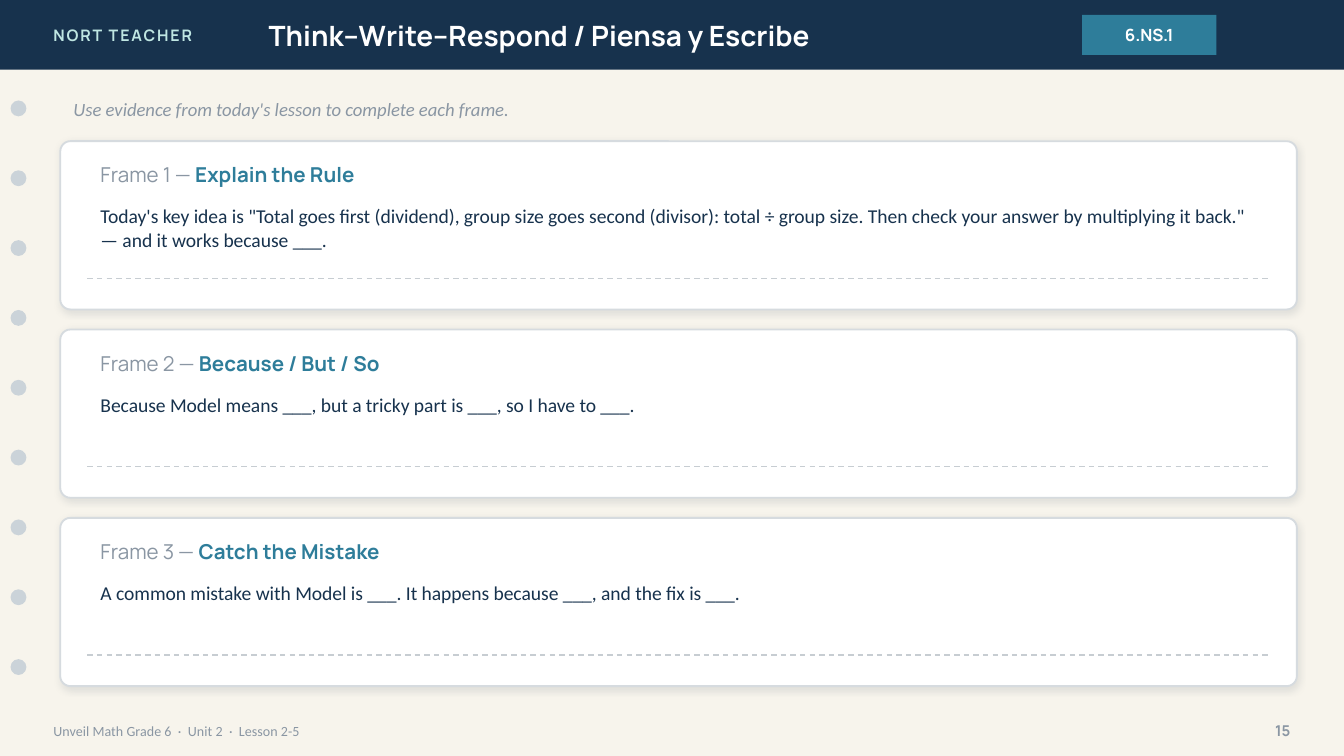
"""Build the Think–Write–Respond slide with three sentence frames."""
from dataclasses import dataclass

from lxml import etree
from pptx import Presentation
from pptx.dml.color import RGBColor
from pptx.enum.dml import MSO_LINE
from pptx.enum.shapes import MSO_CONNECTOR, MSO_SHAPE
from pptx.enum.text import MSO_ANCHOR, PP_ALIGN
from pptx.oxml.ns import qn
from pptx.util import Cm, Pt

RECT, OVAL, ROUNDED = MSO_SHAPE.RECTANGLE, MSO_SHAPE.OVAL, MSO_SHAPE.ROUNDED_RECTANGLE
STRAIGHT, DASH = MSO_CONNECTOR.STRAIGHT, MSO_LINE.DASH
TOP, MIDDLE = MSO_ANCHOR.TOP, MSO_ANCHOR.MIDDLE
LEFT, CENTER, RIGHT = PP_ALIGN.LEFT, PP_ALIGN.CENTER, PP_ALIGN.RIGHT


def style(name, size, color, **extra):
    """Return a dict of font values and their colour."""
    return {"color": color, "font": {"name": name, "size": Pt(size), **extra}}


@dataclass(frozen=True)
class Theme:
    """Colours and type styles of the slide."""

    paper = "F7F4EC"
    navy = "17324D"
    teal = "2E7D9A"
    mint = "BFE6E2"
    white = "FFFFFF"
    muted = "8A96A3"
    hole = "CBD3D9"
    border = "D6DBDF"
    rule = "C7CDD2"
    shadow = "1C2E42"
    brand = style("Manrope", 8.5, mint, bold=True)
    title = style("Manrope", 15, white, bold=True)
    standard = style("Manrope", 9, white, bold=True)
    hint = style("Calibri", 10, muted, italic=True)
    frame_number = style("Manrope", 11, muted)
    frame_name = style("Manrope", 11, teal, bold=True)
    prompt = style("Calibri", 10.5, navy)
    source = style("Calibri", 7.5, muted)
    page = style("Manrope", 8, muted, bold=True)


THEME = Theme()
HOLES, HOLE_TOP, HOLE_PITCH = 9, 1.9, 1.32
CARD_TOP, CARD_PITCH = 2.67, 3.56
CARD_LEFT, CARD_WIDTH, CARD_HEIGHT = 1.14, 23.37, 3.18
INNER_LEFT, INNER_WIDTH = 1.65, 22.35
FRAMES = [
    ("Explain the Rule",
     "Today's key idea is \"Total goes first (dividend), group size goes second (divisor): "
     "total ÷ group size. Then check your answer by multiplying it back.\" "
     "— and it works because ___."),
    ("Because / But / So",
     "Because Model means ___, but a tricky part is ___, so I have to ___."),
    ("Catch the Mistake",
     "A common mistake with Model is ___. It happens because ___, and the fix is ___."),
]


def rgb(color):
    """Return the colour object for a hex value."""
    return RGBColor.from_string(color)


def write(holder, runs, align=LEFT, anchor=MIDDLE):
    """Write styled runs as one paragraph and return the paragraph."""
    frame = holder.text_frame
    for name, value in {"word_wrap": True, "vertical_anchor": anchor}.items():
        setattr(frame, name, value)
    paragraph = frame.paragraphs[0]
    paragraph.alignment = align
    for words, look in runs:
        run = paragraph.add_run()
        run.text = words
        for name, value in look["font"].items():
            setattr(run.font, name, value)
        run.font.color.rgb = rgb(look["color"])
    return paragraph


def add_text(slide, box, runs, align=LEFT, anchor=MIDDLE):
    """Add a text box and return its paragraph."""
    return write(slide.shapes.add_textbox(*map(Cm, box)), runs, align, anchor)


def add_block(slide, preset, box, fill, border=None):
    """Add a filled preset shape with an optional border."""
    block = slide.shapes.add_shape(preset, *map(Cm, box))
    block.shadow.inherit = False
    block.fill.solid()
    block.fill.fore_color.rgb = rgb(fill)
    if border:
        block.line.color.rgb = rgb(border)
        block.line.width = Pt(1)
    else:
        block.line.fill.background()
    return block


def add_soft_shadow(block):
    """Give a shape a faint shadow below it."""
    effects = block._element.spPr.find(qn("a:effectLst"))
    shadow = etree.SubElement(effects, qn("a:outerShdw"), blurRad=str(Pt(4)),
                              dist=str(Pt(1)), dir="5400000", algn="bl", rotWithShape="0")
    tint = etree.SubElement(shadow, qn("a:srgbClr"), val=THEME.shadow)
    etree.SubElement(tint, qn("a:alpha"), val="10000")


def add_writing_line(slide, top):
    """Add a dashed line to write on."""
    rule = slide.shapes.add_connector(
        STRAIGHT, Cm(INNER_LEFT), Cm(top), Cm(INNER_LEFT + INNER_WIDTH), Cm(top))
    rule.line.color.rgb = rgb(THEME.rule)
    for name, value in {"width": Pt(0.75), "dash_style": DASH}.items():
        setattr(rule.line, name, value)
    etree.SubElement(rule._element.spPr, qn("a:effectLst"))


def add_header(slide):
    """Add the title bar with brand, title and standard."""
    add_block(slide, RECT, (0, 0, 25.4, 1.32), THEME.navy)
    brand = add_text(slide, (0.76, 0, 6.1, 1.32), [("NORT TEACHER", THEME.brand)])
    brand.runs[0]._r.get_or_add_rPr().set("spc", "100")
    add_text(slide, (4.83, 0, 14.22, 1.32),
             [("Think–Write–Respond / Piensa y Escribe", THEME.title)])
    standard = add_block(slide, RECT, (20.45, 0.28, 2.54, 0.76), THEME.teal)
    write(standard, [("6.NS.1", THEME.standard)], CENTER)


def add_holes(slide):
    """Add the column of binder holes."""
    for index in range(HOLES):
        add_block(slide, OVAL, (0.2, HOLE_TOP + index * HOLE_PITCH, 0.3, 0.3), THEME.hole)


def add_footer(slide):
    """Add the lesson source and page number."""
    add_text(slide, (0.76, 13.46, 17.78, 0.71),
             [("Unveil Math Grade 6  ·  Unit 2  ·  Lesson 2-5", THEME.source)])
    add_text(slide, (23.37, 13.46, 1.27, 0.71), [("15", THEME.page)], RIGHT)


def add_frame_card(slide, number, name, prompt):
    """Add one sentence frame card."""
    top = CARD_TOP + (number - 1) * CARD_PITCH
    card = add_block(slide, ROUNDED, (CARD_LEFT, top, CARD_WIDTH, CARD_HEIGHT),
                     THEME.white, THEME.border)
    card.adjustments[0] = 0.06
    add_soft_shadow(card)
    add_text(slide, (INNER_LEFT, top + 0.25, INNER_WIDTH, 0.76),
             [(f"Frame {number} — ", THEME.frame_number), (name, THEME.frame_name)])
    add_text(slide, (INNER_LEFT, top + 1.07, INNER_WIDTH, 1.02),
             [(prompt, THEME.prompt)], anchor=TOP)
    add_writing_line(slide, top + 2.59)


def main():
    """Build and save the slide."""
    deck = Presentation()
    deck.slide_width, deck.slide_height = Cm(25.4), Cm(14.29)
    slide = deck.slides.add_slide(deck.slide_layouts[6])
    slide.background.fill.solid()
    slide.background.fill.fore_color.rgb = rgb(THEME.paper)
    add_header(slide)
    add_holes(slide)
    add_footer(slide)
    add_text(slide, (CARD_LEFT, 1.68, CARD_WIDTH, 0.76),
             [("Use evidence from today's lesson to complete each frame.", THEME.hint)])
    for number, (name, prompt) in enumerate(FRAMES, 1):
        add_frame_card(slide, number, name, prompt)
    deck.save("out.pptx")


if __name__ == "__main__":
    main()
